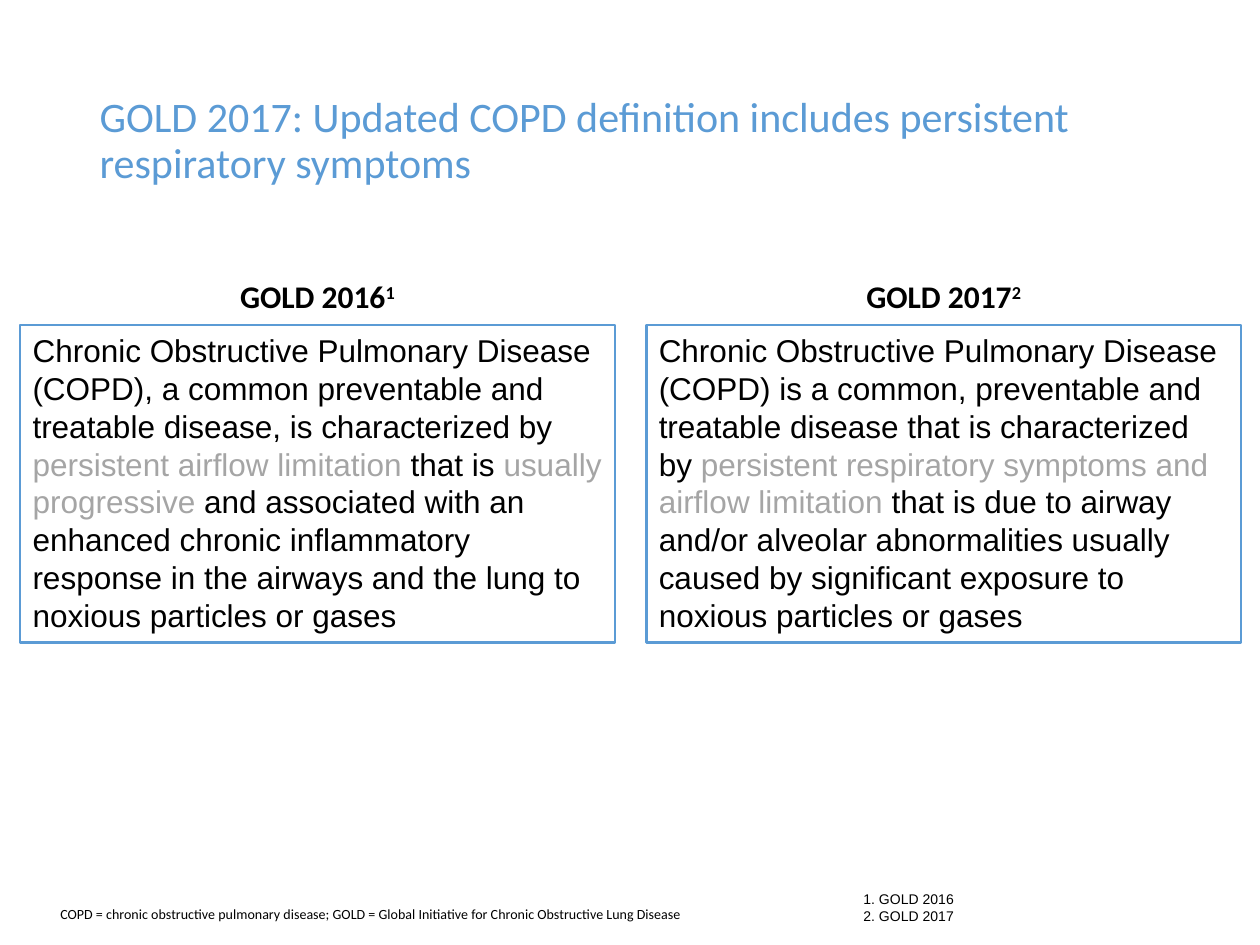
from pptx import Presentation
from pptx.dml.color import RGBColor
from pptx.enum.shapes import MSO_SHAPE
from pptx.enum.text import MSO_ANCHOR, MSO_AUTO_SIZE, PP_ALIGN as ALIGN
from pptx.util import Inches, Pt

BLUE, BLACK, GRAY = "5B9BD5", "000000", "A5A5A5"


def color(value):
    return RGBColor.from_string(value)


class SlideBuilder:
    heading_font = "Calibri"
    body_font = "Arial"

    def __init__(self, page):
        self.page = page

    def format_span(self, span, size, font, fill, bold=False):
        span.font.size = Pt(size)
        span.font.name = font
        span.font.bold = bold
        span.font.color.rgb = color(fill)

    def title(self, text, left, top, width, height):
        box = self.page.shapes.title
        box.left, box.top = Inches(left), Inches(top)
        box.width, box.height = Inches(width), Inches(height)
        frame = box.text_frame
        frame.text = text
        frame.auto_size = MSO_AUTO_SIZE.NONE
        frame.vertical_anchor = MSO_ANCHOR.MIDDLE
        para = frame.paragraphs[0]
        para.alignment = ALIGN.LEFT
        para.line_spacing = 0.9
        self.format_span(para.runs[0], 24, self.heading_font, BLUE)

    def text(self, text, left, top, width, height, size, font, align=ALIGN.LEFT, bold=False):
        box = self.page.shapes.add_textbox(Inches(left), Inches(top), Inches(width), Inches(height))
        frame = box.text_frame
        frame.word_wrap = True
        para = frame.paragraphs[0]
        para.text = text
        para.alignment = align
        for span in para.runs:
            self.format_span(span, size, font, BLACK, bold)
        return para

    def heading(self, text, reference, left, top, width, height):
        """Add a centred heading that ends in a superscript reference number."""
        para = self.text(text, left, top, width, height, 18, self.heading_font, ALIGN.CENTER, True)
        mark = para.add_run()
        mark.text = reference
        self.format_span(mark, 18, self.heading_font, BLACK, True)
        mark.font._element.set("baseline", "30000")

    def definition(self, spans, left, top, width, height):
        """Add an outlined box whose spans alternate between black and gray."""
        box = self.page.shapes.add_shape(
            MSO_SHAPE.RECTANGLE, Inches(left), Inches(top), Inches(width), Inches(height))
        box.shadow.inherit = False
        box.fill.background()
        box.line.color.rgb = color(BLUE)
        box.line.width = Pt(1.5)
        frame = box.text_frame
        frame.word_wrap = True
        frame.vertical_anchor = MSO_ANCHOR.TOP
        para = frame.paragraphs[0]
        para.alignment = ALIGN.LEFT
        for index, text in enumerate(spans):
            span = para.add_run()
            span.text = text
            self.format_span(span, 18, self.body_font, GRAY if index % 2 else BLACK)


COLUMNS = [
    ("GOLD 2016", "1", 0.16, [
        "Chronic Obstructive Pulmonary Disease (COPD), a common preventable and treatable "
        "disease, is characterized by ",
        "persistent airflow limitation ",
        "that is ",
        "usually progressive ",
        "and associated with an enhanced chronic inflammatory response in the airways and "
        "the lung to noxious particles or gases"]),
    ("GOLD 2017", "2", 5.13, [
        "Chronic Obstructive Pulmonary Disease (COPD) is a common, preventable and treatable "
        "disease that is characterized by ",
        "persistent respiratory symptoms and airflow limitation ",
        "that is due to airway and/or alveolar abnormalities usually caused by significant "
        "exposure to noxious particles or gases"]),
]
BOX_WIDTH, HEADING_WIDTH = 4.72, 3.94


def main():
    deck = Presentation()
    deck.slide_width, deck.slide_height = Inches(10), Inches(7.5)
    builder = SlideBuilder(deck.slides.add_slide(deck.slide_layouts[5]))
    builder.title("GOLD 2017: Updated COPD definition includes persistent respiratory symptoms",
                  0.69, 0.4, 8.62, 1.45)
    for name, reference, left, spans in COLUMNS:
        builder.definition(spans, left, 2.58, BOX_WIDTH, 2.52)
        heading_left = left + (BOX_WIDTH - HEADING_WIDTH) / 2
        builder.heading(name, reference, heading_left, 2.15, HEADING_WIDTH, 0.4)
    builder.text("COPD = chronic obstructive pulmonary disease; "
                 "GOLD = Global Initiative for Chronic Obstructive Lung Disease",
                 0.38, 7.14, 5.98, 0.24, 8, builder.heading_font)
    builder.text("1. GOLD 2016\v2. GOLD 2017", 6.65, 7.02, 1.02, 0.37, 8,
                 builder.body_font, ALIGN.RIGHT)
    deck.save("out.pptx")


if __name__ == "__main__":
    main()
